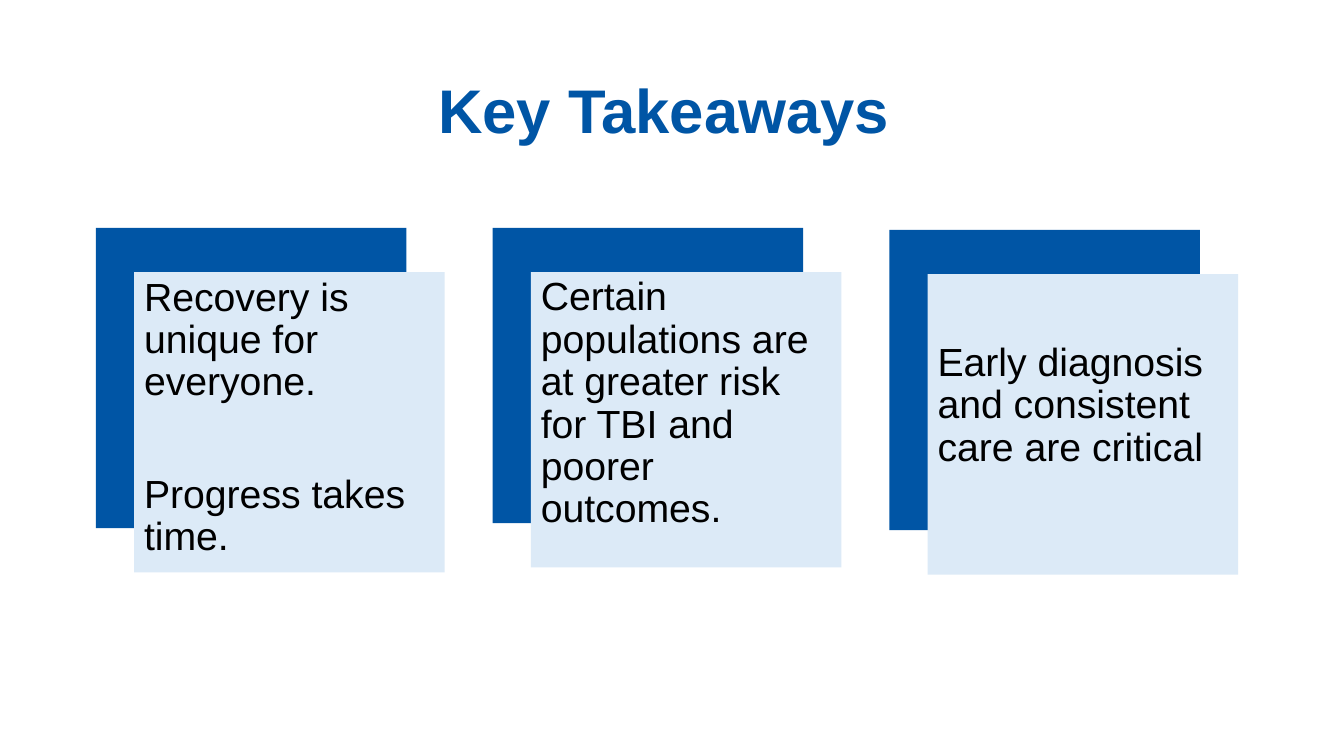
"""Build the Key Takeaways slide with three layered cards."""
from pptx import Presentation
from pptx.dml.color import RGBColor
from pptx.enum.shapes import MSO_SHAPE
from pptx.enum.text import MSO_ANCHOR, PP_ALIGN
from pptx.util import Inches, Pt

RECT = MSO_SHAPE.RECTANGLE
TOP, MIDDLE = MSO_ANCHOR.TOP, MSO_ANCHOR.MIDDLE
LEFT, CENTER = PP_ALIGN.LEFT, PP_ALIGN.CENTER

COLORS = {"blue": "0055A5", "pale": "DCEAF7", "black": "000000"}
FONT = "Arial"
TITLE = "Key Takeaways "
CARDS = [
    {"top": 2.26, "height": 2.98, "inset": 0.05,
     "text": ["Recovery is unique for everyone.", "Progress takes time."]},
    {"top": 2.26, "height": 2.93, "inset": 0.05,
     "text": ["Certain populations are at greater risk for TBI and poorer outcomes."]},
    {"top": 2.28, "height": 2.98, "inset": 0.68,
     "text": ["Early diagnosis and consistent care are critical"]},
]
CARD_LEFT, CARD_PITCH, CARD_WIDTH = 0.95, 3.935, 3.08
OFFSET_X, OFFSET_Y = 0.38, 0.44
PARAGRAPH_GAP = 50


def color(name):
    return RGBColor.from_string(COLORS[name])


def add_panel(slide, left, top, height, fill):
    sp = slide.shapes.add_shape(RECT, Inches(left), Inches(top),
                                Inches(CARD_WIDTH), Inches(height))
    sp.shadow.inherit = False
    sp.fill.solid()
    sp.fill.fore_color.rgb = color(fill)
    sp.line.fill.background()
    return sp


def write(sp, lines, size, ink, align, anchor, bold=False):
    tf = sp.text_frame
    tf.word_wrap = True
    tf.vertical_anchor = anchor
    tf.text = "\n".join(lines)
    for i, p in enumerate(tf.paragraphs):
        p.alignment = align
        p.line_spacing = 0.9
        if i:
            p.space_before = Pt(PARAGRAPH_GAP)
        for r in p.runs:
            r.font.name = FONT
            r.font.size = Pt(size)
            r.font.bold = bold
            r.font.color.rgb = color(ink)


def main():
    prs = Presentation()
    prs.slide_width, prs.slide_height = Inches(13.33), Inches(7.5)
    slide = prs.slides.add_slide(prs.slide_layouts[6])

    title = slide.shapes.add_textbox(Inches(0.92), Inches(0.4), Inches(11.5), Inches(1.45))
    write(title, [TITLE], 44, "blue", CENTER, MIDDLE, bold=True)

    for i, card in enumerate(CARDS):
        left = CARD_LEFT + i * CARD_PITCH
        add_panel(slide, left, card["top"], card["height"], "blue")
        front = add_panel(slide, left + OFFSET_X, card["top"] + OFFSET_Y,
                          card["height"], "pale")
        front.text_frame.margin_top = Inches(card["inset"])
        write(front, card["text"], 28, "black", LEFT, TOP)

    prs.save("out.pptx")


if __name__ == "__main__":
    main()
